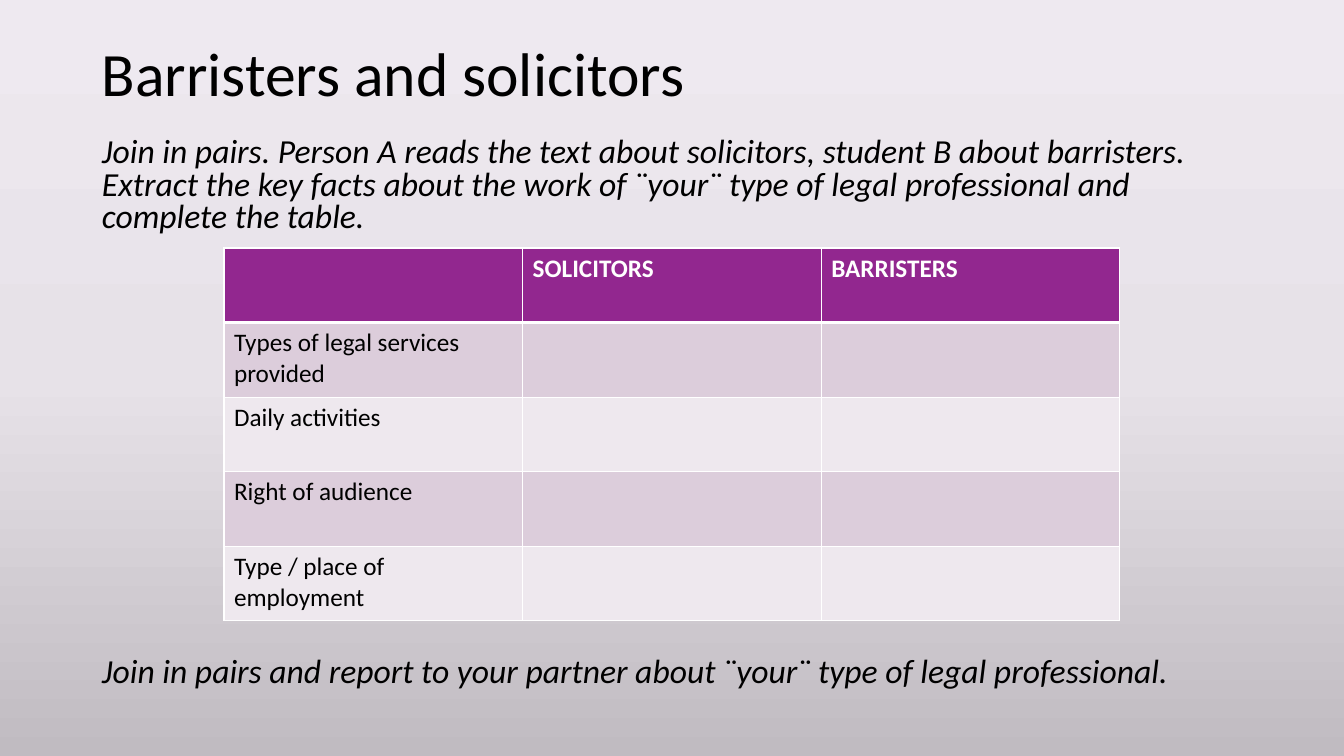
import copy
import pptx
import pptx.util
import pptx.dml.color
import pptx.enum.text
import pptx.oxml
import pptx.oxml.ns

TITLE = "Barristers and solicitors"
TASKS = [
    "Join in pairs. Person A reads the text about solicitors, student B about barristers. "
    "Extract the key facts about the work of ¨your¨ type of legal professional "
    "and complete the table.",
    "Join in pairs and report to your partner about ¨your¨ type of legal professional.",
]
ROWS = [
    ["", "SOLICITORS", "BARRISTERS"],
    ["Types of legal services provided", "", ""],
    ["Daily activities", "", ""],
    ["Right of audience", "", ""],
    ["Type / place of employment", "", ""],
]

THEME = {
    "font": "Calibri", "title": 44, "task": 24, "cell": 18,
    "ink": "000000", "light": "FFFFFF", "head": "92278F",
    "bands": ["DCCDDB", "EEE8EE"],
    "back": [(0, "EEE9F0"), (0.5, "E7E2E8"), (1, "C0BBC1")],
    "thin": 1, "thick": 3,
}
WIDE, HIGH = 1344, 756
HEAD_BOX = (92, 28, 1159, 98)
TASK_BOX = (92, 133, 1159, 585)
GRID_BOX = (224, 248, 896, 373)
TASK_GAP = 302  # points between the two tasks, where the table sits


def px(n):
    return pptx.util.Emu(round(n * 914400 / 100.8))


def rgb(code):
    return pptx.dml.color.RGBColor.from_string(code)


def style(para, size, color, bold=False, italic=False):
    for run in para.runs:
        font = run.font
        font.name, font.size = THEME["font"], pptx.util.Pt(size)
        font.bold, font.italic = bold, italic
        font.color.rgb = rgb(color)


def add_text(slide, box, lines, size, spacing, italic=False):
    frame = slide.shapes.add_textbox(*map(px, box)).text_frame
    frame.word_wrap = True
    frame.text = "\n".join(lines)
    for para in frame.paragraphs:
        para.line_spacing = spacing
        style(para, size, THEME["ink"], italic=italic)
    return frame


def paint(slide):
    """Give the slide its three-stop vertical gradient."""
    fill = slide.background.fill
    fill.gradient()
    fill.gradient_angle = 270
    stops = next(slide.element.iter(pptx.oxml.ns.qn("a:gsLst")))
    stops.append(copy.deepcopy(stops[0]))
    for stop, (place, color) in zip(fill.gradient_stops, THEME["back"]):
        stop.position = place
        stop.color.rgb = rgb(color)


def edge(cell, side, width):
    cell._tc.get_or_add_tcPr().append(pptx.oxml.parse_xml(
        f'<a:ln{side} {pptx.oxml.ns.nsdecls("a")} w="{pptx.util.Pt(width)}">'
        f'<a:solidFill><a:srgbClr val="{THEME["light"]}"/></a:solidFill></a:ln{side}>'))


def add_grid(slide):
    count, span = len(ROWS), len(ROWS[0])
    grid = slide.shapes.add_table(count, span, *map(px, GRID_BOX)).table
    for col in grid.columns:
        col.width = px(GRID_BOX[2] / span)
    for r, texts in enumerate(ROWS):
        grid.rows[r].height = px(GRID_BOX[3] / count)
        top = r == 0
        back = THEME["head"] if top else THEME["bands"][(r - 1) % 2]
        for c, text in enumerate(texts):
            cell = grid.cell(r, c)
            for side in "LRTB":
                rule = (r, side) in ((0, "B"), (1, "T"))
                edge(cell, side, THEME["thick" if rule else "thin"])
            cell.fill.solid()
            cell.fill.fore_color.rgb = rgb(back)
            if text:
                cell.text_frame.text = text
                style(cell.text_frame.paragraphs[0], THEME["cell"],
                      THEME["light" if top else "ink"], bold=top)


def main():
    deck = pptx.Presentation()
    deck.slide_width, deck.slide_height = px(WIDE), px(HIGH)
    slide = deck.slides.add_slide(deck.slide_layouts[6])
    paint(slide)
    head = add_text(slide, HEAD_BOX, [TITLE], THEME["title"], 0.9)
    head.vertical_anchor = pptx.enum.text.MSO_ANCHOR.MIDDLE
    tasks = add_text(slide, TASK_BOX, TASKS, THEME["task"], 0.8, italic=True)
    tasks.paragraphs[1].space_before = pptx.util.Pt(TASK_GAP)
    add_grid(slide)
    deck.save("out.pptx")


if __name__ == "__main__":
    main()
